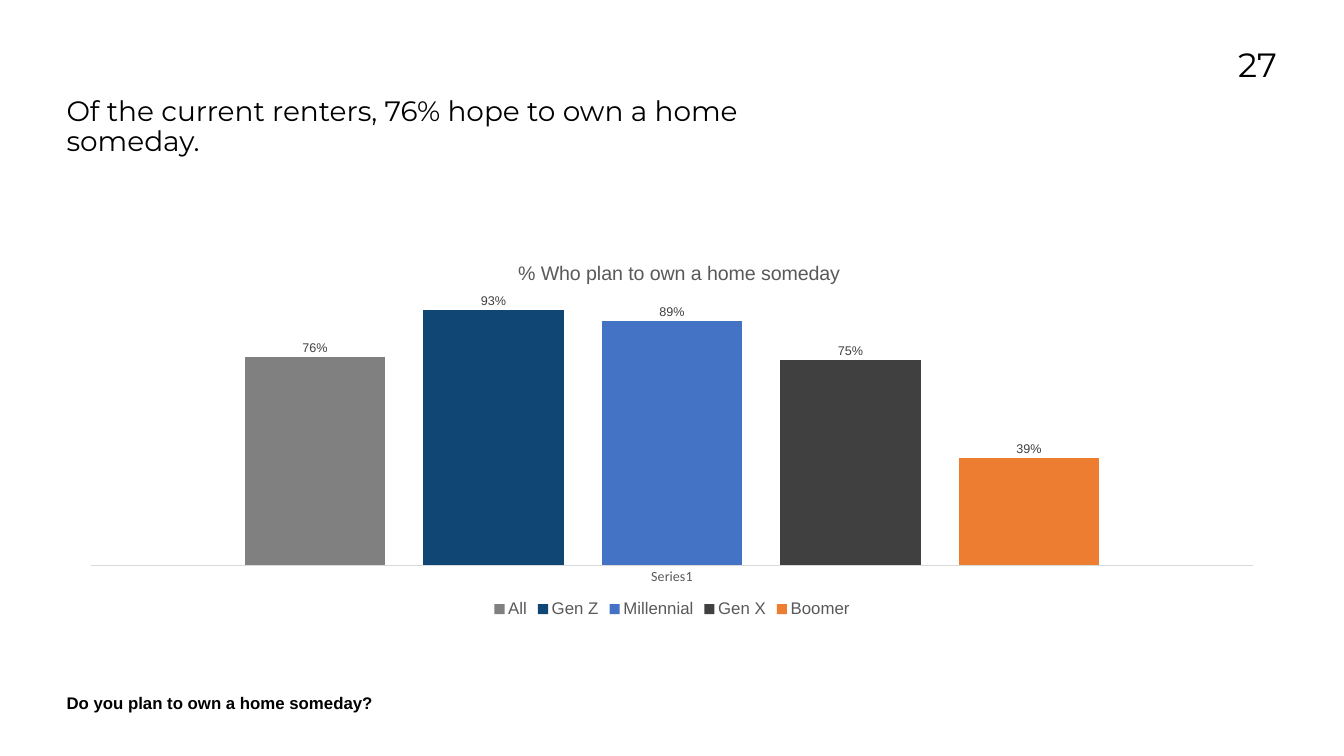
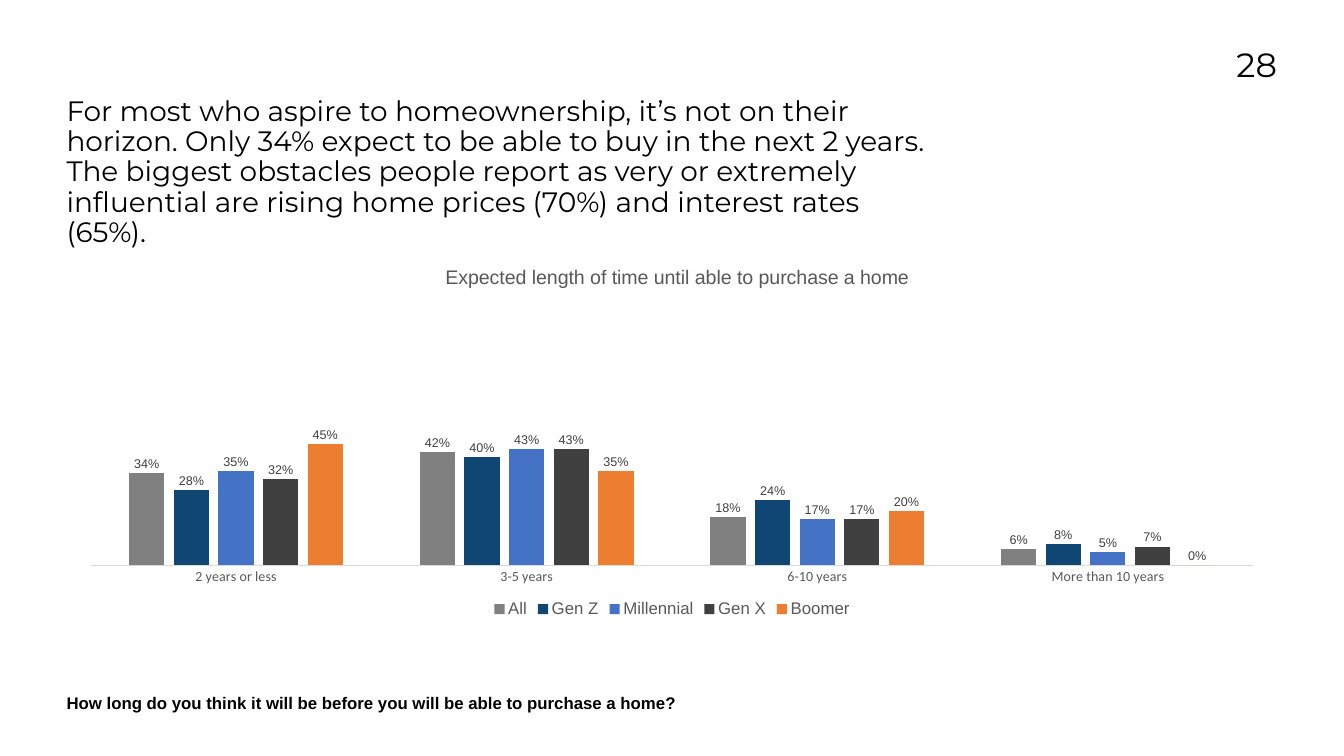
"""Build two slides on renters' plans to own a home."""
from lxml.etree import SubElement as Sub
from pptx import Presentation
from pptx.chart.data import CategoryChartData as Data
from pptx.dml.color import RGBColor as Rgb
from pptx.enum.chart import XL_CHART_TYPE as Kind, XL_LABEL_POSITION as Spot
from pptx.enum.chart import XL_LEGEND_POSITION as Side, XL_TICK_MARK as Tick
from pptx.enum.text import PP_ALIGN as Align
from pptx.oxml.ns import qn
from pptx.util import Pt

PX = 9144
WIDE, HIGH, LEFT = 2667, 1500, 132
HEX = {"ink": "000000", "text": "595959", "label": "404040", "rule": "D9D9D9"}
GROUPS = [
    ("All", "808080"),
    ("Gen Z", "104674"),
    ("Millennial", "4472C4"),
    ("Gen X", "404040"),
    ("Boomer", "ED7D31"),
]
PAGES = [
    {
        "page": "27",
        "head": "Of the current renters, 76% hope to own a home someday.",
        "width": 1601,
        "title": "% Who plan to own a home someday",
        "spot": (0.37, 0.03),
        "plot": (0.02, 0.12, 0.96, 0.73),
        "cats": ["Series1"],
        "rows": [[0.76], [0.93], [0.89], [0.75], [0.39]],
        "ask": "Do you plan to own a home someday?",
    },
    {
        "page": "28",
        "head": "For most who aspire to homeownership, it’s not on their horizon. "
                "Only 34% expect to be able to buy in the next 2 years. "
                "The biggest obstacles people report as very or extremely "
                "influential are rising home prices (70%) and interest rates (65%).",
        "width": 1710,
        "title": "Expected length of time until able to purchase a home",
        "spot": (0.31, 0.04),
        "plot": (0.02, 0.13, 0.96, 0.72),
        "cats": ["2 years or less", "3-5 years", "6-10 years", "More than 10 years"],
        "rows": [
            [0.34, 0.42, 0.18, 0.06],
            [0.28, 0.40, 0.24, 0.08],
            [0.35, 0.43, 0.17, 0.05],
            [0.32, 0.43, 0.17, 0.07],
            [0.45, 0.35, 0.20, 0],
        ],
        "ask": "How long do you think it will be before you will be able to purchase a home?",
    },
]


def style(font, face, size, color, bold=False):
    font.name, font.size, font.bold = face, Pt(size), bold
    font.color.rgb = Rgb.from_string(HEX[color])


def write(slide, box, text, face, size, bold=False, space=1.0, align=Align.LEFT):
    frame = slide.shapes.add_textbox(*(n * PX for n in box)).text_frame
    frame.word_wrap = True
    frame.margin_left = frame.margin_right = frame.margin_top = frame.margin_bottom = 0
    para = frame.paragraphs[0]
    para.alignment, para.line_spacing = align, space
    run = para.add_run()
    run.text = text
    style(run.font, face, size, "ink", bold)


def place(node, index, sizes, inner=False):
    for old in node.findall(qn("c:layout")):
        node.remove(old)
    layout = node.makeelement(qn("c:layout"))
    node.insert(index, layout)
    spot = Sub(layout, qn("c:manualLayout"))
    if inner:
        Sub(spot, qn("c:layoutTarget"), val="inner")
    keys = ("x", "y", "w", "h")[:len(sizes)]
    for key in keys[:2]:
        Sub(spot, qn(f"c:{key}Mode"), val="edge")
    for key, size in zip(keys, sizes):
        Sub(spot, qn(f"c:{key}"), val=str(size))


def draw(slide, page):
    data = Data(number_format="0%")
    data.categories = page["cats"]
    for (name, _), row in zip(GROUPS, page["rows"]):
        data.add_series(name, row)
    box = (n * PX for n in (LEFT, 488, 2403, 746))
    chart = slide.shapes.add_chart(Kind.COLUMN_CLUSTERED, *box, data).chart
    style(chart.font, "Calibri", 10, "ink")

    chart.has_title = True
    title = chart.chart_title
    run = title.text_frame.paragraphs[0].add_run()
    run.text = page["title"]
    style(run.font, "Arial", 28, "text")
    title.include_in_layout = False
    place(title._element, 1, page["spot"])
    place(chart._chartSpace.chart.plotArea, 0, page["plot"], True)

    chart.has_legend = True
    chart.legend.position = Side.BOTTOM
    chart.legend.include_in_layout = False
    style(chart.legend.font, "Arial", 24, "text")

    axis = chart.category_axis
    axis.major_tick_mark = axis.minor_tick_mark = Tick.NONE
    axis.format.line.color.rgb = Rgb.from_string(HEX["rule"])
    axis.format.line.width = Pt(0.75)
    style(axis.tick_labels.font, "Calibri", 20, "text")
    scale = chart.value_axis
    scale.minimum_scale, scale.maximum_scale = 0, 1
    scale.has_major_gridlines = scale.visible = False

    plot = chart.plots[0]
    plot.gap_width, plot.overlap, plot.vary_by_categories = 219, -27, False
    for bars, (_, color) in zip(plot.series, GROUPS):
        bars.format.fill.solid()
        bars.format.fill.fore_color.rgb = Rgb.from_string(color)
        labels = bars.data_labels
        labels.show_value = True
        labels.position = Spot.OUTSIDE_END
        labels.number_format, labels.number_format_is_linked = "0%", False
        style(labels.font, "Arial", 18, "label")


def main():
    deck = Presentation()
    deck.slide_width, deck.slide_height = WIDE * PX, HIGH * PX
    for page in PAGES:
        slide = deck.slides.add_slide(deck.slide_layouts[6])
        write(slide, (2309, 88, 225, 164), page["page"], "Montserrat", 48, align=Align.RIGHT)
        draw(slide, page)
        write(slide, (LEFT, 193, page["width"], 208), page["head"], "Montserrat", 40, space=0.9)
        write(slide, (LEFT, 1355, 1327, 65), page["ask"], "Arial", 24, True, 1.5)
    deck.save("out.pptx")


if __name__ == "__main__":
    main()
